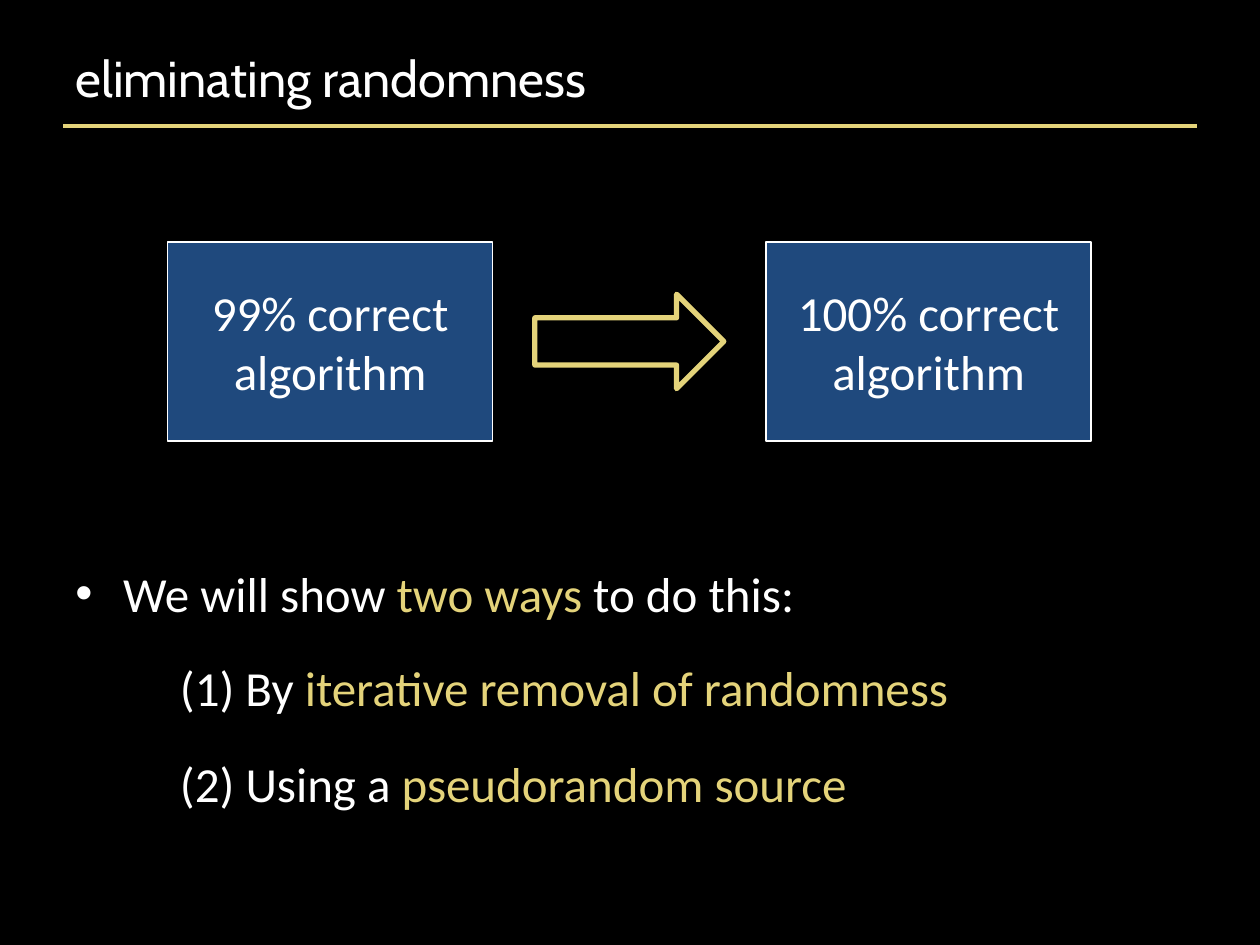
from lxml import etree
from pptx import Presentation
from pptx.dml.color import RGBColor
from pptx.enum.shapes import MSO_CONNECTOR, MSO_SHAPE
from pptx.enum.text import MSO_ANCHOR, PP_ALIGN
from pptx.oxml.ns import qn
from pptx.util import Inches, Pt

COLORS = {"black": "000000", "white": "FFFFFF", "gold": "E4D37A", "navy": "1F497D"}
BODY_SIZE = 28


def rgb(name):
    return RGBColor.from_string(COLORS[name])


def add_run(paragraph, text, color="white", size=BODY_SIZE, font="Calibri"):
    run = paragraph.add_run()
    run.text = text
    run.font.size = Pt(size)
    run.font.name = font
    run.font.color.rgb = rgb(color)


def add_text(slide, left, top, width, height, runs, wrap=True, **style):
    """Place one paragraph made of (text, color) runs and return its frame."""
    box = slide.shapes.add_textbox(Inches(left), Inches(top), Inches(width), Inches(height))
    frame = box.text_frame
    frame.word_wrap = wrap
    for text, color in runs:
        add_run(frame.paragraphs[0], text, color, **style)
    return frame


def add_block(slide, preset, left, top, width, height, fill, line, line_width):
    block = slide.shapes.add_shape(
        preset, Inches(left), Inches(top), Inches(width), Inches(height))
    block.shadow.inherit = False
    block.fill.solid()
    block.fill.fore_color.rgb = rgb(fill)
    block.line.color.rgb = rgb(line)
    block.line.width = Pt(line_width)
    return block


def add_header(slide, left, top, width):
    # Title
    title = add_text(slide, left, top, width, 0.62, [("eliminating randomness", "white")],
                     size=28.8, font="Cabin")
    title.vertical_anchor = MSO_ANCHOR.MIDDLE
    # Rule below the title
    rule_y = Inches(top + 0.7)
    rule = slide.shapes.add_connector(
        MSO_CONNECTOR.STRAIGHT, Inches(left), rule_y, Inches(left + width), rule_y)
    rule.line.color.rgb = rgb("gold")
    rule.line.width = Pt(2)
    etree.SubElement(rule._element.spPr, qn("a:effectLst"))


def add_diagram(slide, left, top, width, height):
    # Algorithm boxes at both ends
    box_width = 2.58
    for box_left, share in ((left, "99%"), (left + width - box_width, "100%")):
        algorithm = add_block(slide, MSO_SHAPE.RECTANGLE, box_left, top, box_width, height,
                              "navy", "white", 0.75)
        frame = algorithm.text_frame
        frame.vertical_anchor = MSO_ANCHOR.MIDDLE
        for paragraph, text in ((frame.paragraphs[0], f"{share} correct"),
                                (frame.add_paragraph(), "algorithm")):
            paragraph.alignment = PP_ALIGN.CENTER
            add_run(paragraph, text)
    # Arrow centred between them
    arrow_width, arrow_height = 1.5, 0.75
    add_block(slide, MSO_SHAPE.RIGHT_ARROW, left + (width - arrow_width) / 2,
              top + (height - arrow_height) / 2, arrow_width, arrow_height,
              "black", "gold", 3)


def add_ways(slide, left, top, width):
    # Bulleted lead sentence
    lead = add_text(slide, left, top, width, 0.67, [
        ("We will show ", "white"), ("two ways ", "gold"), ("to do this:", "white")])
    paragraph = lead.paragraphs[0]
    paragraph.space_before = Pt(0.2 * BODY_SIZE)
    properties = paragraph._p.get_or_add_pPr()
    properties.set("marL", str(Inches(0.38)))
    properties.set("indent", str(Inches(-0.38)))
    etree.SubElement(properties, qn("a:buFont"), typeface="Arial")
    etree.SubElement(properties, qn("a:buChar"), char="•")
    # Numbered ways
    ways = [("(1) By ", "iterative removal of randomness", 6.37),
            ("(2) Using a ", "pseudorandom source", 5.55)]
    for index, (opening, method, way_width) in enumerate(ways):
        add_text(slide, left + 0.83, top + 0.75 + 0.76 * index, way_width, 0.57,
                 [(opening, "white"), (method, "gold")], wrap=False)


def main():
    presentation = Presentation()
    presentation.slide_width, presentation.slide_height = Inches(10), Inches(7.5)
    slide = presentation.slides.add_slide(presentation.slide_layouts[6])
    slide.background.fill.solid()
    slide.background.fill.fore_color.rgb = rgb("black")
    add_header(slide, 0.5, 0.3, 9)
    add_diagram(slide, 1.33, 1.92, 7.33, 1.58)
    add_ways(slide, 0.5, 4.42, 9)
    presentation.save("out.pptx")


if __name__ == "__main__":
    main()
